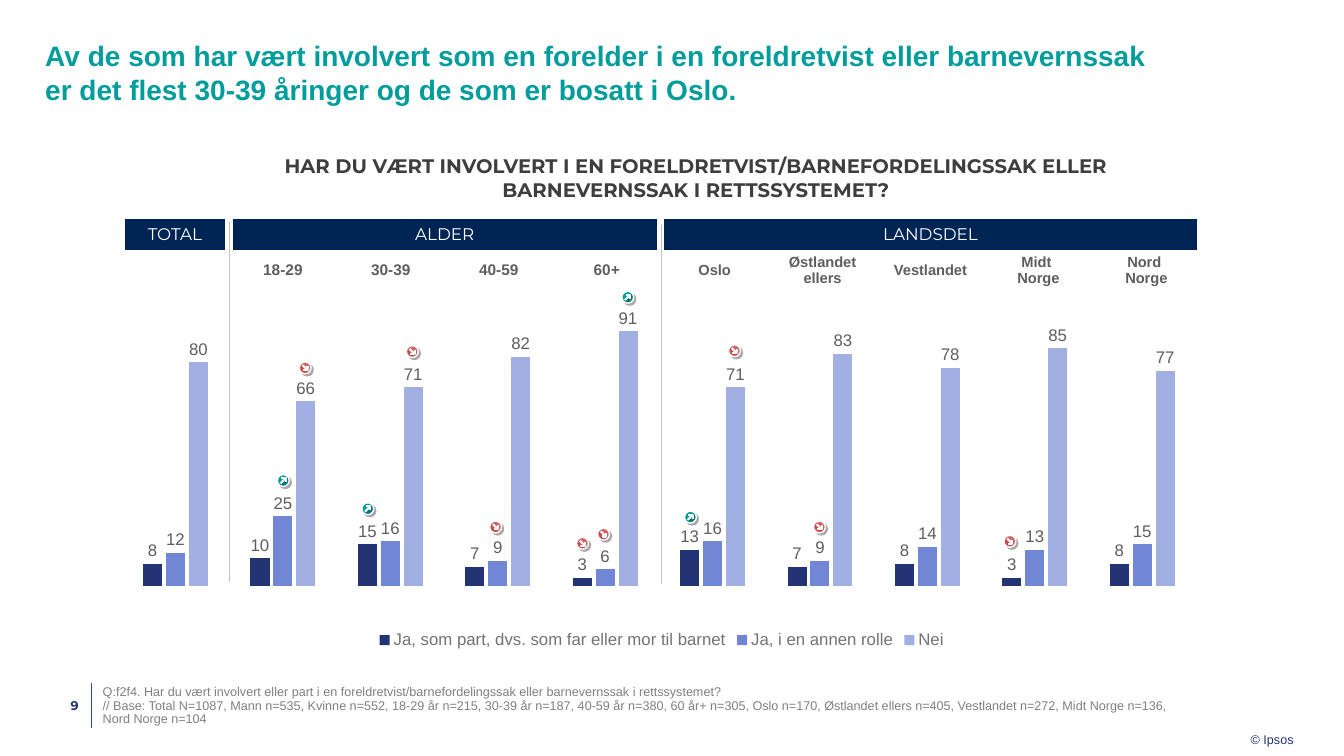
from dataclasses import dataclass
from typing import NamedTuple

from lxml import etree
from pptx import Presentation
from pptx.chart.data import CategoryChartData
from pptx.dml.color import RGBColor
from pptx.enum.chart import XL_CHART_TYPE, XL_LABEL_POSITION, XL_LEGEND_POSITION
from pptx.enum.shapes import MSO_CONNECTOR, MSO_SHAPE
from pptx.enum.text import MSO_ANCHOR, MSO_AUTO_SIZE, PP_ALIGN
from pptx.oxml import parse_xml
from pptx.oxml.ns import nsdecls, qn
from pptx.util import Cm, Pt

LEFT, CENTER, RIGHT = PP_ALIGN.LEFT, PP_ALIGN.CENTER, PP_ALIGN.RIGHT
TOP, MIDDLE, BOTTOM = MSO_ANCHOR.TOP, MSO_ANCHOR.MIDDLE, MSO_ANCHOR.BOTTOM
STRAIGHT = MSO_CONNECTOR.STRAIGHT
NAVY, TEAL, WHITE, GREY, INDIGO = "002554", "009D9C", "FFFFFF", "5E5E5E", "233475"


@dataclass
class Style:
    size: float
    color: str
    font: str = "Arial"
    bold: bool = False
    align: PP_ALIGN = LEFT
    anchor: MSO_ANCHOR = TOP
    spacing: float = 1.0


class Label(NamedTuple):
    text: str
    area: tuple[float, float, float, float]
    margins: tuple[float, float, float, float]
    style: Style
    wrap: bool = True


class Rule(NamedTuple):
    x: float
    top: float
    bottom: float
    color: str


class Band(NamedTuple):
    text: str
    first: int
    last: int


class Marker(NamedTuple):
    x: float
    y: float
    rising: bool


class Series(NamedTuple):
    name: str
    values: tuple[int, ...]
    color: str


TITLE = Label("Av de som har vært involvert som en forelder i en foreldretvist eller barnevernssak "
              "er det flest 30-39 åringer og de som er bosatt i Oslo.",
              (1.14, 1.8, 28.14, 0.97), (0, 0.1, 0, 0.1), Style(20, TEAL, bold=True, anchor=BOTTOM))
LABELS = [
    Label("© Ipsos", (31.52, 18.34, 1.09, 0.48), (0, 0.1, 0, 0), Style(9, INDIGO), False),
    Label("9", (1.14, 17.22, 1.14, 1.09), (0, 0, 0.3, 0),
          Style(9, INDIGO, "Montserrat", True, RIGHT, MIDDLE)),
    Label("Q:f2f4. Har du vært involvert eller part i en foreldretvist/barnefordelingssak eller "
          "barnevernssak i rettssystemet?\n// Base: Total N=1087, Mann n=535, Kvinne n=552, "
          "18-29 år n=215, 30-39 år n=187, 40-59 år n=380, 60 år+ n=305, Oslo n=170, "
          "Østlandet ellers n=405, Vestlandet n=272, Midt Norge n=136, Nord Norge n=104",
          (2.59, 17.27, 27.36, 1.04), (0, 0, 0, 0), Style(9, "808080", anchor=BOTTOM, spacing=0.9)),
    Label("HAR DU VÆRT INVOLVERT I EN FORELDRETVIST/BARNEFORDELINGSSAK ELLER "
          "BARNEVERNSSAK I RETTSSYSTEMET?",
          (5.82, 3.89, 23.44, 1.19), (0, 0, 0, 0), Style(14, "3E3E3E", "Montserrat", True, CENTER)),
]
FOOTER_RULE = Rule(2.29, 17.22, 18.34, "2F469C")
DIVIDERS = [Rule(5.77, 5.59, 14.66, "BFBFBF"), Rule(16.66, 5.66, 14.71, "BFBFBF")]
SERIES = [
    Series("Ja, som part, dvs. som far eller mor til barnet", (8, 10, 15, 7, 3, 13, 7, 8, 3, 8), INDIGO),
    Series("Ja, i en annen rolle", (12, 25, 16, 9, 6, 16, 9, 14, 13, 15), "7186D4"),
    Series("Nei", (80, 66, 71, 82, 91, 71, 83, 78, 85, 77), "A1AFE3"),
]
BANDS = [Band("TOTAL", 0, 0), Band("ALDER", 1, 4), Band("LANDSDEL", 5, 9)]
AGES = ["18-29", "30-39", "40-59", "60+"]
REGIONS = ["Oslo", "Østlandet ellers", "Vestlandet", "Midt \nNorge", "Nord \nNorge"]
MARKERS = [
    Marker(6.99, 11.96, True), Marker(7.54, 9.12, False), Marker(10.24, 8.71, False),
    Marker(9.12, 12.67, True), Marker(15.67, 7.34, True), Marker(14.53, 13.54, False),
    Marker(15.06, 13.31, False), Marker(18.36, 8.69, False), Marker(17.25, 12.88, True),
    Marker(25.3, 13.49, False), Marker(12.34, 13.13, False), Marker(20.5, 13.13, False),
]


def rgb(value: str) -> RGBColor:
    return RGBColor.from_string(value)


def set_font(font, size: float, color: str, name: str = "Arial", bold: bool = False) -> None:
    font.size, font.name, font.bold = Pt(size), name, bold
    font.color.rgb = rgb(color)


def write(frame, text: str, style: Style) -> None:
    para = frame.paragraphs[0]
    para.alignment, para.line_spacing = style.align, style.spacing
    for index, line in enumerate(text.split("\n")):
        if index:
            para.add_line_break()
        span = para.add_run()
        span.text = line
        set_font(span.font, style.size, style.color, style.font, style.bold)


def fill_label(box, label: Label) -> None:
    box.left, box.top, box.width, box.height = map(Cm, label.area)
    frame = box.text_frame
    frame.auto_size, frame.word_wrap = MSO_AUTO_SIZE.NONE, label.wrap
    frame.vertical_anchor = label.style.anchor
    (frame.margin_left, frame.margin_top,
     frame.margin_right, frame.margin_bottom) = map(Cm, label.margins)
    write(frame, label.text, label.style)


def add_line(shapes, start: tuple, end: tuple, color: str, width: float) -> None:
    line = shapes.add_connector(STRAIGHT, *map(Cm, start + end))
    line.line.color.rgb = rgb(color)
    line.line.width = Pt(width)
    etree.SubElement(line._element.spPr, qn("a:effectLst"))


def add_rule(shapes, rule: Rule) -> None:
    add_line(shapes, (rule.x, rule.top), (rule.x, rule.bottom), rule.color, 0.5)


def add_bars(page) -> None:
    data = CategoryChartData()
    data.categories = [str(number) for number in range(1, 11)]
    for series in SERIES:
        data.add_series(series.name, series.values)
    chart = page.shapes.add_chart(XL_CHART_TYPE.COLUMN_CLUSTERED, Cm(2.59), Cm(7.04),
                                  Cm(28.17), Cm(9.42), data).chart
    set_font(chart.font, 10, "282828")
    chart.has_title = False
    chart.has_legend = True
    chart.legend.position = XL_LEGEND_POSITION.BOTTOM
    chart.legend.include_in_layout = False
    set_font(chart.legend.font, 12, "737373")
    axis = chart.value_axis
    axis.minimum_scale, axis.maximum_scale = 0, 100
    axis.has_major_gridlines = axis.visible = chart.category_axis.visible = False
    plot = chart.plots[0]
    plot.gap_width, plot.overlap, plot.vary_by_categories = 223, -20, False
    for bars, series in zip(plot.series, SERIES):
        bars.format.fill.solid()
        bars.format.fill.fore_color.rgb = rgb(series.color)
        labels = bars.data_labels
        labels.show_value = True
        labels.position = XL_LABEL_POSITION.OUTSIDE_END
        set_font(labels.font, 12, GREY)
    # Fixed inner plot area, so that bars line up with the table columns
    area = chart._chartSpace.chart.plotArea
    for old in area.findall(qn("c:layout")):
        area.remove(old)
    sizes = "".join(f'<c:{tag} val="{value}"/>' for tag, value in
                    (("x", 0.017), ("y", 0.072), ("w", 0.961), ("h", 0.749)))
    area.insert(0, parse_xml(
        f'<c:layout {nsdecls("c")}><c:manualLayout><c:layoutTarget val="inner"/>'
        f'<c:xMode val="edge"/><c:yMode val="edge"/>{sizes}</c:manualLayout></c:layout>'))


def add_headings(page) -> None:
    table = page.shapes.add_table(2, 10, Cm(3.05), Cm(5.51), Cm(27.2), Cm(1.8)).table
    table.first_row = table.horz_banding = False
    table.rows[0].height, table.rows[1].height = Cm(0.8), Cm(1)
    for column in table.columns:
        column.width = Cm(2.72)
    for cell in table.iter_cells():
        cell.margin_left = cell.margin_right = cell.margin_top = cell.margin_bottom = 0
        cell.vertical_anchor = MIDDLE
        cell.fill.background()
    for band in BANDS:
        cell = table.cell(0, band.first)
        if band.last > band.first:
            cell.merge(table.cell(0, band.last))
        for position, side in enumerate(("lnL", "lnR")):
            cell._tc.get_or_add_tcPr().insert(position, parse_xml(
                f'<a:{side} {nsdecls("a")} w="{Pt(6)}"><a:solidFill>'
                f'<a:srgbClr val="{WHITE}"/></a:solidFill></a:{side}>'))
        cell.fill.solid()
        cell.fill.fore_color.rgb = rgb(NAVY)
        write(cell.text_frame, band.text, Style(12, WHITE, "Montserrat", align=CENTER))
    for column, text in enumerate(AGES + REGIONS, start=1):
        size = 11 if text in AGES else 10.5
        write(table.cell(1, column).text_frame, text, Style(size, GREY, bold=True, align=CENTER))


def add_marker(page, marker: Marker) -> None:
    shapes = page.shapes.add_group_shape().shapes
    disc = shapes.add_shape(MSO_SHAPE.OVAL, Cm(marker.x), Cm(marker.y), Cm(0.3), Cm(0.3))
    disc.rotation = 0 if marker.rising else 90
    disc.fill.gradient()
    disc.fill.gradient_angle = 315
    colors = (TEAL, "007675") if marker.rising else ("D26464", "CC4A4A")
    for stop, color in zip(disc.fill.gradient_stops, colors):
        stop.position, stop.color.rgb = 0.5, rgb(color)
    disc.line.color.rgb, disc.line.width = rgb(WHITE), Pt(1)
    disc.shadow.inherit = False
    disc._element.spPr.find(qn("a:effectLst")).append(parse_xml(
        f'<a:outerShdw {nsdecls("a")} blurRad="0" dist="{Pt(2)}" dir="2700000">'
        '<a:srgbClr val="282828"><a:alpha val="40000"/></a:srgbClr></a:outerShdw>'))

    # Arrow: a falling one is a rising one flipped top to bottom
    def at(x: float, y: float) -> tuple[float, float]:
        return marker.x + x, marker.y + (y if marker.rising else 0.3 - y)

    add_line(shapes, at(0.21, 0.09), at(0.08, 0.22), WHITE, 1.5)
    start, *corners = [tuple(map(Cm, at(x, y))) for x, y in ((0.1, 0.09), (0.21, 0.09), (0.21, 0.19))]
    builder = shapes.build_freeform(*start)
    builder.add_line_segments(corners, close=False)
    head = builder.convert_to_shape()
    head.fill.background()
    head.line.color.rgb, head.line.width = rgb(WHITE), Pt(1.5)
    head.shadow.inherit = False


def main() -> None:
    deck = Presentation()
    deck.slide_width, deck.slide_height = Cm(33.87), Cm(19.05)
    page = deck.slides.add_slide(deck.slide_layouts[5])
    # Title, footer and chart heading
    fill_label(page.shapes.title, TITLE)
    add_rule(page.shapes, FOOTER_RULE)
    for label in LABELS:
        fill_label(page.shapes.add_textbox(*map(Cm, label.area)), label)
    # Chart with its column headings
    add_bars(page)
    add_headings(page)
    for divider in DIVIDERS:
        add_rule(page.shapes, divider)
    # Significance markers
    for marker in MARKERS:
        add_marker(page, marker)
    deck.save("out.pptx")


if __name__ == "__main__":
    main()
